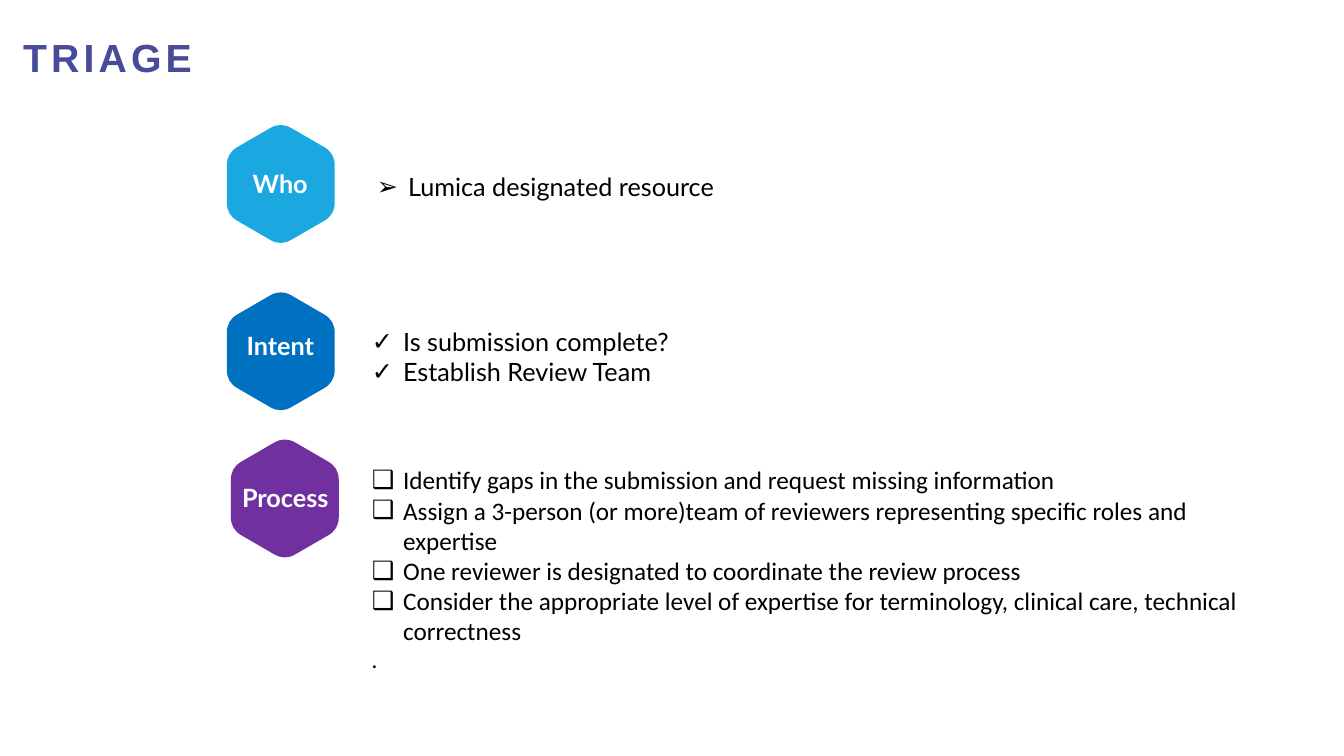
import pptx
import pptx.util
import pptx.dml.color
import pptx.enum.text
import pptx.oxml.ns
import lxml.etree

RGB = pptx.dml.color.RGBColor
ALIGN = pptx.enum.text.PP_ALIGN
FIT = pptx.enum.text.MSO_AUTO_SIZE
INDIGO = RGB(0x48, 0x4B, 0x99)
SKY = RGB(0x1B, 0xA8, 0xE0)
BLUE = RGB(0x00, 0x70, 0xC0)
PURPLE = RGB(0x70, 0x30, 0xA0)
WHITE = RGB(0xFF, 0xFF, 0xFF)
BLACK = RGB(0x00, 0x00, 0x00)

SCALE = 9144  # EMU per px, 100 px to the inch
HEX_W, HEX_H = 107, 119
CUT = 12      # where the rounding of a hexagon corner starts
INDENT = 31

# hexagon corner, label corner, label, colour, list box, bullet, font, items
ROWS = [
    ((225, 123), (213, 162), "Who", SKY,
     (364, 165, 562, 40), "➢", "Lato",
     ["Lumica designated resource"]),
    ((225, 289), (213, 323), "Intent", BLUE,
     (359, 319, 562, 71), "✓", "Lato",
     ["Is submission complete?", "Establish Review Team"]),
    ((229, 435), (218, 474), "Process", PURPLE,
     (359, 456, 908, 219), "❑", "Calibri",
     ["Identify gaps in the submission and request missing information",
      "Assign a 3-person (or more)team of reviewers representing "
      "specific roles and expertise",
      "One reviewer is designated to coordinate the review process",
      "Consider the appropriate level of expertise for terminology, "
      "clinical care, technical correctness"]),
]


def px(n):
    return round(n * SCALE)


def style(para, font, size, color, bold=False):
    for run in para.runs:
        run.font.name = font
        run.font.size = pptx.util.Pt(size)
        run.font.color.rgb = color
        run.font.bold = bold


def add_box(shapes, box):
    frame = shapes.add_textbox(*map(px, box)).text_frame
    frame.word_wrap = True
    frame.auto_size = FIT.SHAPE_TO_FIT_TEXT
    return frame


def between(a, b, part=0.5):
    return [p + (q - p) * part for p, q in zip(a, b)]


def outline(left, top):
    """Return (control, point) pairs; control is None on a straight side."""
    mid = HEX_W / 2
    tips = [(mid, -2), (HEX_W, 29), (HEX_W, HEX_H - 29),
            (mid, HEX_H + 2), (0, HEX_H - 29), (0, 29)]
    tips = [(left + x, top + y) for x, y in tips]

    def toward(a, b):
        gap = ((b[0] - a[0]) ** 2 + (b[1] - a[1]) ** 2) ** 0.5
        return between(a, b, CUT / gap)

    pairs = []
    for i, tip in enumerate(tips):
        start = toward(tip, tips[i - 1])
        end = toward(tip, tips[(i + 1) % 6])
        near, far = between(start, tip), between(tip, end)
        pairs += [(None, start), (near, between(near, far)), (far, end)]
    return pairs


def add_hexagon(shapes, left, top, color):
    pairs = outline(left, top)
    points = [tuple(map(px, point)) for _, point in pairs]
    pen = shapes.build_freeform(*points[0])
    pen.add_line_segments(points[1:], close=True)
    shape = pen.convert_to_shape()
    sides = list(shape._element.iter(pptx.oxml.ns.qn("a:lnTo")))
    for side, (control, _) in zip(sides, pairs[1:]):
        if control:
            side.tag = pptx.oxml.ns.qn("a:quadBezTo")
            bend = lxml.etree.Element(pptx.oxml.ns.qn("a:pt"))
            bend.set("x", str(px(control[0]) - shape.left))
            bend.set("y", str(px(control[1]) - shape.top))
            side.insert(0, bend)
    shape.shadow.inherit = False
    shape.fill.solid()
    shape.fill.fore_color.rgb = color
    shape.line.fill.background()


def add_badge(slide, corner, spot, label, color):
    """Draw a hexagon at corner and its label at spot."""
    shapes = slide.shapes.add_group_shape().shapes
    add_hexagon(shapes, *corner, color)
    frame = add_box(shapes, (*spot, 130, 40))
    frame.text = label
    frame.paragraphs[0].alignment = ALIGN.CENTER
    style(frame.paragraphs[0], "Lato", 18, WHITE, True)


def add_list(slide, box, mark, font, items):
    frame = add_box(slide.shapes, box)
    frame.text = "\n".join(items)
    for para in frame.paragraphs:
        props = para._p.get_or_add_pPr()
        props.set("marL", str(px(INDENT)))
        props.set("indent", str(-px(INDENT)))
        for tag, key, value in (("a:buFont", "typeface", "Arial"),
                                ("a:buChar", "char", mark)):
            part = lxml.etree.SubElement(props, pptx.oxml.ns.qn(tag))
            part.set(key, value)
        style(para, font, 18, BLACK)
    return frame


def add_title(slide, box, text):
    frame = add_box(slide.shapes, box)
    frame.auto_size = FIT.NONE
    frame.vertical_anchor = pptx.enum.text.MSO_ANCHOR.MIDDLE
    frame.text = text
    para = frame.paragraphs[0]
    para.line_spacing = 0.9
    style(para, "Arial", 28, INDIGO, True)
    para.runs[0]._r.get_or_add_rPr().set("spc", "300")


def main():
    deck = pptx.Presentation()
    deck.slide_width, deck.slide_height = px(1333), px(750)
    slide = deck.slides.add_slide(deck.slide_layouts[6])

    add_title(slide, (13, 15, 1229, 88), "TRIAGE")
    for corner, spot, label, color, box, mark, font, items in ROWS:
        add_badge(slide, corner, spot, label, color)
        frame = add_list(slide, box, mark, font, items)

    last = frame.add_paragraph()
    last.text = "."
    style(last, "Lato", 16, BLACK)
    deck.save("out.pptx")


if __name__ == "__main__":
    main()
